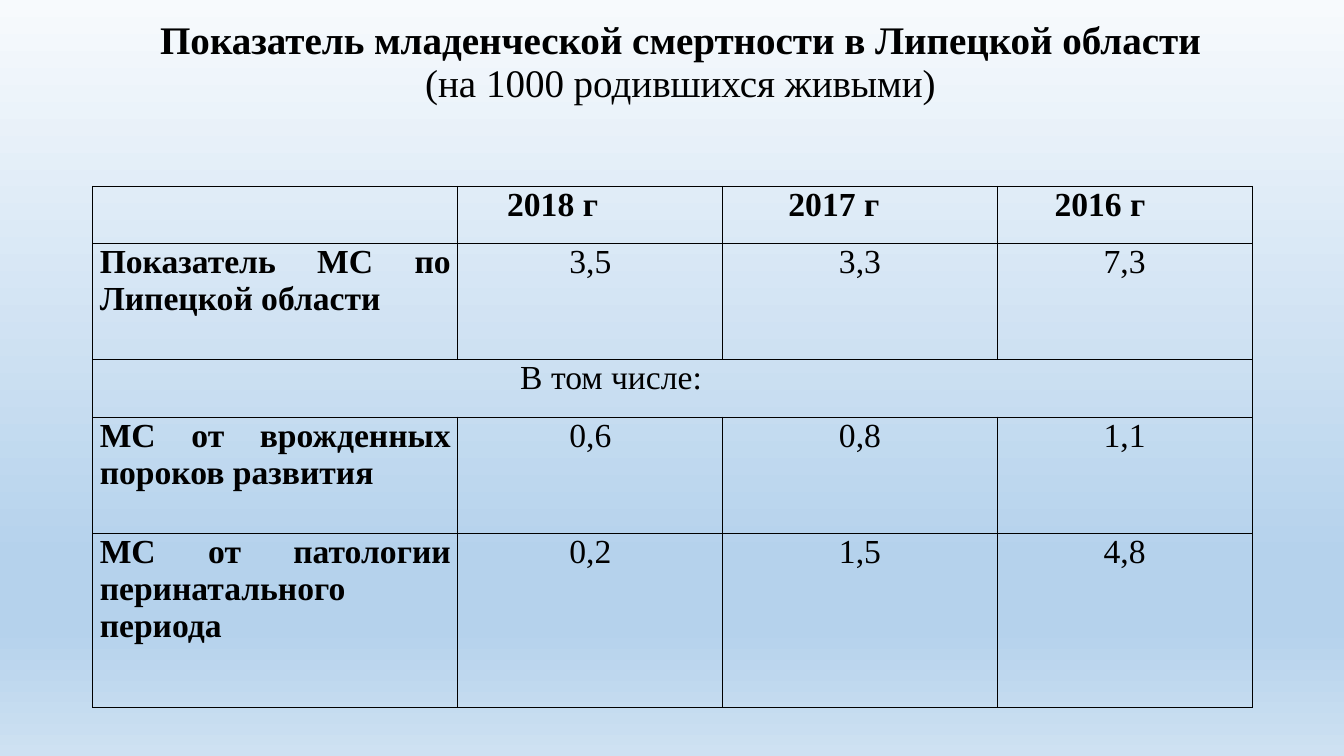
import copy
from dataclasses import dataclass

import lxml.etree
import pptx
import pptx.dml.color
import pptx.enum.text
import pptx.oxml.ns
import pptx.table
import pptx.util

Inches = pptx.util.Inches
Pt = pptx.util.Pt
RGBColor = pptx.dml.color.RGBColor
Align = pptx.enum.text.PP_ALIGN
qn = pptx.oxml.ns.qn

BLACK = RGBColor(0x00, 0x00, 0x00)
SKY_WHITE = RGBColor(0xF7, 0xFA, 0xFD)
SKY_BLUE = RGBColor(0xB5, 0xD2, 0xEC)
SKY_PALE = RGBColor(0xCE, 0xE1, 0xF2)
BACKGROUND_STOPS = [(0, SKY_WHITE), (0.74, SKY_BLUE), (0.83, SKY_BLUE), (1, SKY_PALE)]

FONT = "Times New Roman"
CELL_MARGIN = 0.07
COLUMN_WIDTHS = [3.62, 2.63, 2.72, 2.53]
ROW_HEIGHTS = [0.57, 1.15, 0.57, 1.15, 1.73]


@dataclass
class Entry:
    text: str
    bold: bool = False
    align: Align = Align.CENTER
    indent: float = 0


def heading(text: str, indent: float = 0) -> Entry:
    return Entry(text, True, Align.JUSTIFY, indent)


def indicator(name: str, *values: str) -> list[Entry]:
    return [heading(name), *(Entry(value) for value in values)]


ROWS = [
    [heading(""), heading("2018 г", 0.42), heading("2017 г", 0.58), heading("2016 г", 0.5)],
    indicator("Показатель МС по Липецкой области", "3,5", "3,3", "7,3"),
    [Entry("В том числе:", align=Align.JUSTIFY, indent=4.17)] + [Entry("")] * 3,
    indicator("МС от врожденных пороков развития", "0,6", "0,8", "1,1"),
    indicator("МС от патологии перинатального периода", "0,2", "1,5", "4,8"),
]
INCLUDING_ROW = 2


def format_font(font, size: float, bold: bool | None = None) -> None:
    font.name = FONT
    font.size = Pt(size)
    font.color.rgb = BLACK
    font.bold = bold


def add_borders(cell: pptx.table._Cell) -> None:
    properties = cell._tc.get_or_add_tcPr()
    for side in ("lnL", "lnR", "lnT", "lnB"):
        line = lxml.etree.SubElement(properties, qn(f"a:{side}"), w=str(Pt(1)))
        fill = lxml.etree.SubElement(line, qn("a:solidFill"))
        lxml.etree.SubElement(fill, qn("a:srgbClr"), val=str(BLACK))


def fill_cell(cell: pptx.table._Cell, entry: Entry) -> None:
    add_borders(cell)
    cell.fill.background()
    cell.margin_left = cell.margin_right = Inches(CELL_MARGIN)
    cell.margin_top = cell.margin_bottom = 0
    paragraph = cell.text_frame.paragraphs[0]
    paragraph.text = entry.text
    paragraph.alignment = entry.align
    format_font(paragraph.font, 24, entry.bold)
    if entry.indent:
        # A paragraph indent, unlike a cell margin, leaves the column width alone
        paragraph._p.get_or_add_pPr().set("marL", str(Inches(entry.indent)))


def main() -> None:
    presentation = pptx.Presentation()
    presentation.slide_width = Inches(13.33)
    presentation.slide_height = Inches(7.5)
    slide = presentation.slides.add_slide(presentation.slide_layouts[5])

    # Background gradient, from top to bottom
    background = slide.background.fill
    background.gradient()
    background.gradient_angle = 270
    stop_list = next(slide.element.iter(qn("a:gsLst")))
    while len(stop_list) < len(BACKGROUND_STOPS):
        stop_list.append(copy.deepcopy(stop_list[0]))
    for stop, (position, color) in zip(background.gradient_stops, BACKGROUND_STOPS):
        stop.position = position
        stop.color.rgb = color

    # Title
    title = slide.shapes.title
    title.left, title.top = Inches(0.92), Inches(0.21)
    title.width, title.height = Inches(11.66), Inches(1.43)
    frame = title.text_frame
    frame.auto_size = pptx.enum.text.MSO_AUTO_SIZE.NONE
    frame.word_wrap = True
    frame.vertical_anchor = pptx.enum.text.MSO_ANCHOR.TOP
    frame.margin_top = 0
    caption = frame.paragraphs[0]
    caption.alignment = Align.CENTER
    caption.line_spacing = 0.9
    format_font(caption.font, 27.9)
    subject = caption.add_run()
    subject.text = "Показатель младенческой смертности в Липецкой области"
    subject.font.bold = True
    caption.add_line_break()
    unit = caption.add_run()
    unit.text = "(на 1000 родившихся живыми)"
    unit.font.bold = False

    # Mortality table
    mortality = slide.shapes.add_table(
        len(ROWS), len(COLUMN_WIDTHS),
        Inches(0.92), Inches(1.85), Inches(11.5), Inches(5.17),
    ).table
    mortality.first_row = mortality.horz_banding = False
    for column, width in zip(mortality.columns, COLUMN_WIDTHS):
        column.width = Inches(width)
    for row, height, entries in zip(mortality.rows, ROW_HEIGHTS, ROWS):
        row.height = Inches(height)
        for cell, entry in zip(row.cells, entries):
            fill_cell(cell, entry)
    last_column = len(COLUMN_WIDTHS) - 1
    mortality.cell(INCLUDING_ROW, 0).merge(mortality.cell(INCLUDING_ROW, last_column))

    presentation.save("out.pptx")


if __name__ == "__main__":
    main()
